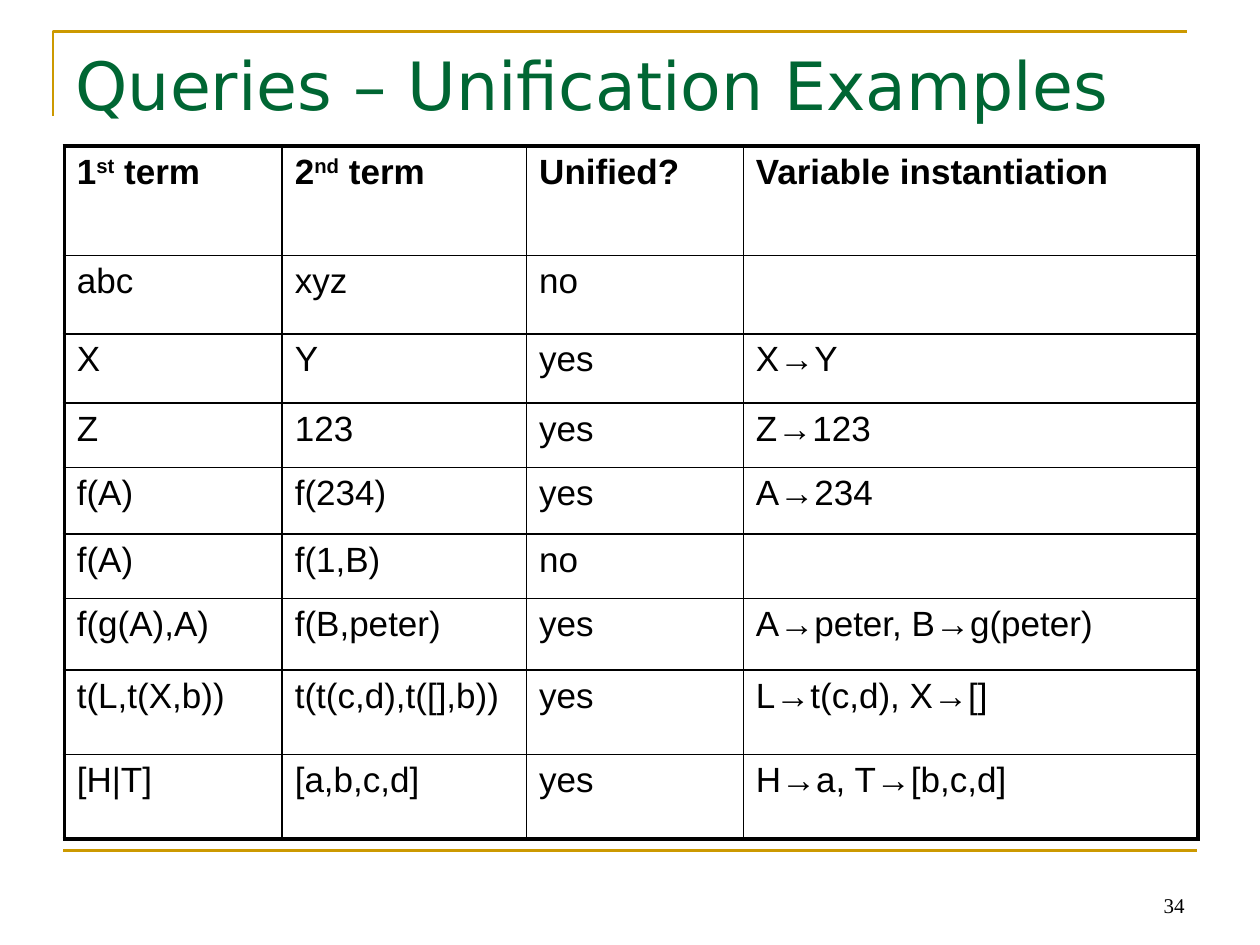
from lxml import etree
from pptx import Presentation
from pptx.dml.color import RGBColor
from pptx.enum.shapes import MSO_CONNECTOR
from pptx.enum.text import MSO_ANCHOR, PP_ALIGN
from pptx.oxml.ns import qn
from pptx.util import Inches, Pt

STRAIGHT = MSO_CONNECTOR.STRAIGHT
TOP, BOTTOM = MSO_ANCHOR.TOP, MSO_ANCHOR.BOTTOM
LEFT, RIGHT = PP_ALIGN.LEFT, PP_ALIGN.RIGHT
GOLD = RGBColor(0xCC, 0x99, 0x00)
GREEN = RGBColor(0x00, 0x66, 0x33)
BLACK = RGBColor(0x00, 0x00, 0x00)
TITLE_ONLY = 5
THIN, THICK = 1, 2.25

HEADERS = [
    [("1", 0), ("st", 30), (" term", 0)],
    [("2", 0), ("nd", 30), (" term", 0)],
    [("Unified?", 0)],
    [("Variable instantiation", 0)],
]
EXAMPLES = [
    ("abc", "xyz", "no", ""),
    ("X", "Y", "yes", "X→Y"),
    ("Z", "123", "yes", "Z→123"),
    ("f(A)", "f(234)", "yes", "A→234"),
    ("f(A)", "f(1,B)", "no", ""),
    ("f(g(A),A)", "f(B,peter)", "yes", "A→peter, B→g(peter)"),
    ("t(L,t(X,b))", "t(t(c,d),t([],b))", "yes", "L→t(c,d), X→[]"),
    ("[H|T]", "[a,b,c,d]", "yes", "H→a, T→[b,c,d]"),
]
COLUMN_WIDTHS = [1.73, 1.94, 1.72, 3.61]
ROW_HEIGHTS = [0.87, 0.62, 0.55, 0.51, 0.53, 0.51, 0.57, 0.67, 0.67]


def write(para, text, size=20, font="Arial", color=BLACK, bold=False, raised=0, align=LEFT):
    """Add a formatted span to para; raised is the superscript offset in percent."""
    para.alignment = align
    span = para.add_run()
    span.text = text
    span.font.size = Pt(size)
    span.font.name = font
    span.font.color.rgb = color
    span.font.bold = bold
    if raised:
        span.font._element.set("baseline", str(raised * 1000))


def add_border(cell, side, width):
    """Draw one cell border; side is L, R, T or B, in that order."""
    line = etree.SubElement(cell._tc.get_or_add_tcPr(), qn("a:ln" + side), w=str(Pt(width)))
    fill = etree.SubElement(line, qn("a:solidFill"))
    etree.SubElement(fill, qn("a:srgbClr"), val=str(BLACK))


deck = Presentation()
deck.slide_width, deck.slide_height = Inches(10), Inches(7.5)
page = deck.slides.add_slide(deck.slide_layouts[TITLE_ONLY])

# Gold corner above the title and rule below the table
builder = page.shapes.build_freeform(Inches(0.42), Inches(0.92))
builder.add_line_segments(
    [(Inches(0.42), Inches(0.25)), (Inches(9.42), Inches(0.25))], close=False)
corner = builder.convert_to_shape()
corner.shadow.inherit = False
corner.fill.background()
rule = page.shapes.add_connector(
    STRAIGHT, Inches(0.5), Inches(6.75), Inches(9.5), Inches(6.75))
etree.SubElement(rule._element.spPr, qn("a:effectLst"))
for ornament in (corner, rule):
    ornament.line.color.rgb = GOLD
    ornament.line.width = Pt(1.5)

# Title
title = page.shapes.title
title.left, title.top = Inches(0.5), Inches(0.3)
title.width, title.height = Inches(9), Inches(1.25)
title.text_frame.vertical_anchor = TOP
write(title.text_frame.paragraphs[0], "Queries – Unification Examples",
      size=38, font="DejaVu Sans", color=GREEN)

# Page number
number_box = page.shapes.add_textbox(Inches(7.17), Inches(6.83), Inches(2.33), Inches(0.5))
number_box.text_frame.word_wrap = True
number_box.text_frame.vertical_anchor = BOTTOM
write(number_box.text_frame.paragraphs[0], "34",
      size=12, font="Times New Roman", align=RIGHT)

# Table of unification examples
row_count, column_count = len(ROW_HEIGHTS), len(COLUMN_WIDTHS)
table = page.shapes.add_table(
    row_count, column_count, Inches(0.51), Inches(1.16), Inches(9), Inches(5.5)).table
table.first_row = table.horz_banding = False
for column, width in zip(table.columns, COLUMN_WIDTHS):
    column.width = Inches(width)
for row, height in zip(table.rows, ROW_HEIGHTS):
    row.height = Inches(height)

for column_index, spans in enumerate(HEADERS):
    para = table.cell(0, column_index).text_frame.paragraphs[0]
    for text, raised in spans:
        write(para, text, bold=True, raised=raised)
for row_index, example in enumerate(EXAMPLES, start=1):
    for column_index, text in enumerate(example):
        if text:
            write(table.cell(row_index, column_index).text_frame.paragraphs[0], text)

for row_index in range(row_count):
    for column_index in range(column_count):
        cell = table.cell(row_index, column_index)
        outer_sides = {
            "L": column_index == 0,
            "R": column_index == column_count - 1,
            "T": row_index == 0,
            "B": row_index == row_count - 1,
        }
        for side, is_outer in outer_sides.items():
            add_border(cell, side, THICK if is_outer else THIN)
        cell.fill.background()

deck.save("out.pptx")
